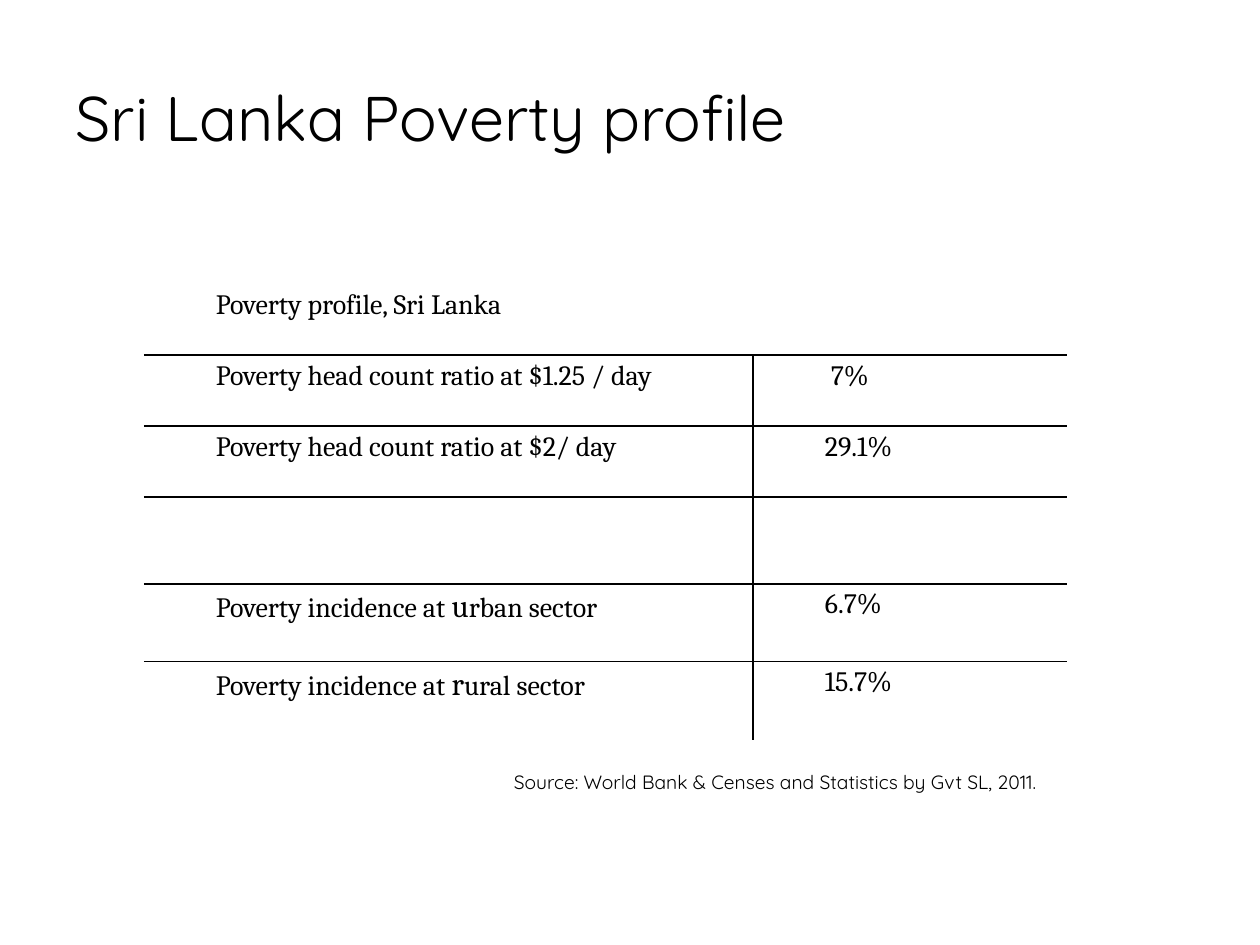
"""Build the Sri Lanka poverty profile slide."""
from dataclasses import dataclass

import pptx
import pptx.dml.color
import pptx.enum.text
import pptx.oxml
import pptx.oxml.ns
import pptx.util
from pptx.util import Cm

BLACK = pptx.dml.color.RGBColor(0, 0, 0)
HEADING_FONT = "Quicksand"
BODY_FONT = "Cambria"


@dataclass(frozen=True)
class Span:
    text: str
    size: float = 16
    font: str = BODY_FONT


@dataclass(frozen=True)
class Row:
    height: float
    label: tuple[Span, ...] = ()
    value: tuple[Span, ...] = ()
    value_indent: float = 1.27


ROWS = (
    Row(1.43, (Span("Poverty profile, Sri Lanka"),)),
    Row(1.43, (Span("Poverty head count ratio at $1.25 / day"),), (Span("7%"),), 1.39),
    Row(1.43, (Span("Poverty head count ratio at $2/ day"),), (Span("29.1%"),)),
    Row(1.75),
    Row(1.57, (Span("Poverty incidence at "), Span("u", 18), Span("rban sector")), (Span("6.7%"),)),
    Row(1.57, (Span("Poverty incidence at "), Span("r", 18), Span("ural sector")), (Span("15.7%"),)),
)
COLUMN_WIDTHS = (12.28, 6.32)


def write_spans(para, spans: tuple[Span, ...]) -> None:
    """Add formatted runs to a paragraph."""
    for span in spans:
        run = para.add_run()
        run.text = span.text
        run.font.size = pptx.util.Pt(span.size)
        run.font.name = span.font
        run.font.color.rgb = BLACK


def set_borders(cell, visible: str) -> None:
    """Draw the named sides (L, R, T, B) and hide the others."""
    properties = cell._tc.get_or_add_tcPr()
    for side in "LRTB":
        paint = f'<a:solidFill><a:srgbClr val="{BLACK}"/></a:solidFill>' if side in visible else "<a:noFill/>"
        properties.append(pptx.oxml.parse_xml(
            f'<a:ln{side} {pptx.oxml.ns.nsdecls("a")} w="12700">{paint}</a:ln{side}>'))
    cell.fill.background()


def fill_cell(cell, spans: tuple[Span, ...], indent: float) -> None:
    """Write indented text in a table cell."""
    cell.margin_left = cell.margin_right = Cm(0.18)
    cell.margin_top = cell.margin_bottom = 0
    para = cell.text_frame.paragraphs[0]
    para.line_spacing = 1.15
    para._p.get_or_add_pPr().set("marL", str(Cm(indent)))
    write_spans(para, spans)


def add_poverty_table(page) -> None:
    """Add the poverty table with its inner rules."""
    frame = page.shapes.add_table(
        len(ROWS), len(COLUMN_WIDTHS), Cm(2.9), Cm(5.73),
        Cm(sum(COLUMN_WIDTHS)), Cm(sum(row.height for row in ROWS)))
    table = frame.table
    table.first_row = table.horz_banding = False
    for column, width in zip(table.columns, COLUMN_WIDTHS):
        column.width = Cm(width)
    table.cell(0, 0).merge(table.cell(0, 1))
    for index, row in enumerate(ROWS):
        table.rows[index].height = Cm(row.height)
        rules = ("T" if index else "") + ("B" if index < len(ROWS) - 1 else "")
        label, value = table.cell(index, 0), table.cell(index, 1)
        set_borders(label, rules + ("R" if index else ""))
        set_borders(value, rules + ("L" if index else ""))
        if row.label:
            fill_cell(label, row.label, 1.27)
        if row.value:
            fill_cell(value, row.value, row.value_indent)


def set_title(page) -> None:
    """Place and format the slide title."""
    title = page.shapes.title
    title.left, title.top, title.width, title.height = Cm(1.27), Cm(1.45), Cm(15.14), Cm(1.8)
    title.text_frame.vertical_anchor = pptx.enum.text.MSO_ANCHOR.MIDDLE
    para = title.text_frame.paragraphs[0]
    para.alignment = pptx.enum.text.PP_ALIGN.LEFT
    write_spans(para, (Span("Sri Lanka Poverty profile", 36, HEADING_FONT),))


def add_source_note(page) -> None:
    """Add the source line under the table."""
    box = page.shapes.add_textbox(Cm(10.11), Cm(15.4), Cm(11.79), Cm(0.74))
    box.text_frame.word_wrap = True
    write_spans(box.text_frame.paragraphs[0], (
        Span("Source: World Bank & Censes and Statistics by Gvt SL, 2011.", 11, HEADING_FONT),))


def main() -> None:
    """Build and save the deck."""
    deck = pptx.Presentation()
    deck.slide_width, deck.slide_height = Cm(25.4), Cm(19.05)
    page = deck.slides.add_slide(deck.slide_layouts[5])
    set_title(page)
    add_poverty_table(page)
    add_source_note(page)
    deck.save("out.pptx")


if __name__ == "__main__":
    main()
